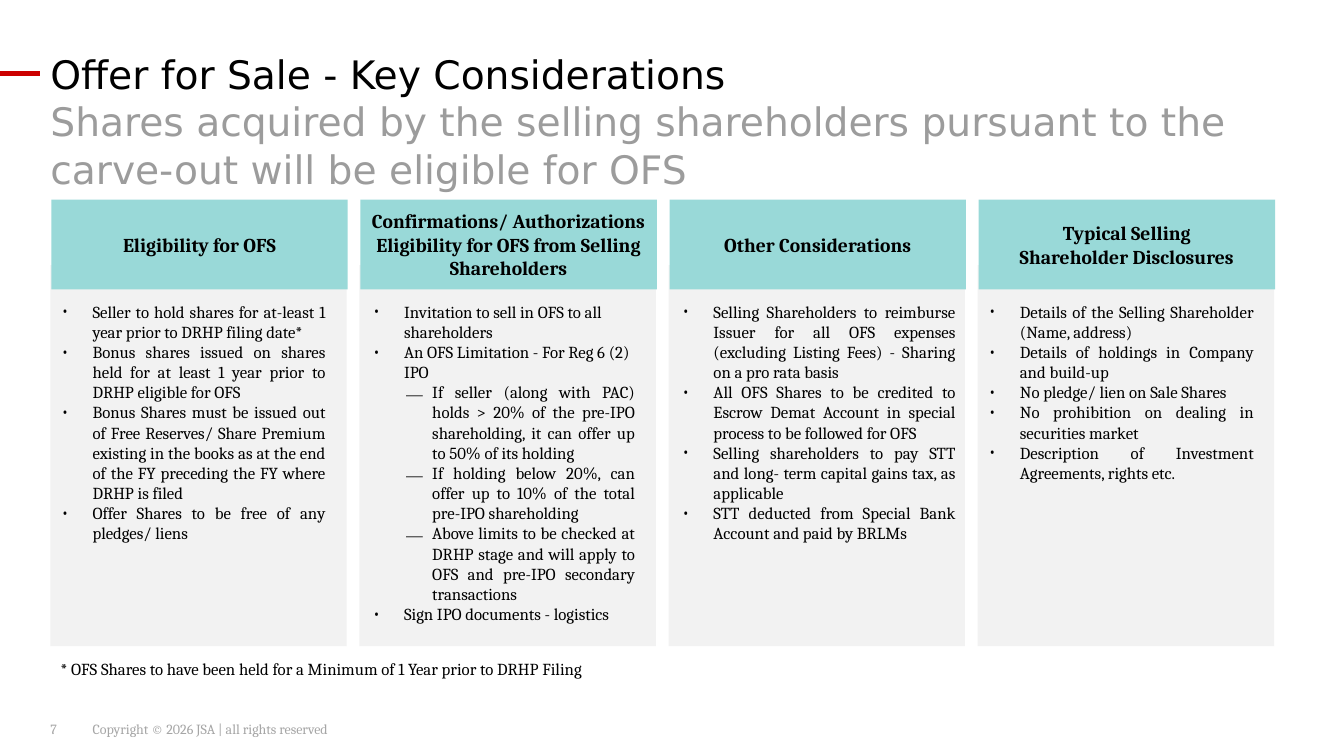
from dataclasses import dataclass

from lxml.etree import SubElement
from pptx import Presentation
from pptx.dml.color import RGBColor
from pptx.enum.shapes import MSO_CONNECTOR, MSO_SHAPE
from pptx.enum.text import MSO_ANCHOR, MSO_AUTO_SIZE, PP_ALIGN
from pptx.oxml.ns import qn
from pptx.util import Inches, Pt

GRID_COLUMNS, GRID_ROWS = 400, 225
MARGIN, CONTENT_WIDTH = 15, 370
CARD_PITCH, CARD_WIDTH = 92, 88.2
HEADER_TOP, HEADER_HEIGHT = 59.4, 26.7
PANEL_TOP, PANEL_HEIGHT = 78.9, 113.4
LIST_TOP, LIST_HEIGHT = 88.2, 100
BULLET, DASH = "•", "⎼"
INDENTS = {BULLET: (9.3, 9.3), DASH: (17.7, 7.8)}


@dataclass(frozen=True)
class Theme:
    """Colours, fonts and type sizes of the slide."""

    ink: str = "000000"
    subtitle: str = "9C9C9C"
    footer: str = "A6A6A6"
    accent: str = "CC0000"
    header: str = "99D9D8"
    panel: str = "F2F2F2"
    heading_font: str = "DejaVu Sans"
    body_font: str = "Cambria"
    heading_size: int = 28
    header_size: int = 14
    body_size: int = 12
    footer_size: int = 10


@dataclass(frozen=True)
class Card:
    """One column: header lines, marked items and the place of its list."""

    header: tuple
    items: tuple
    list_shift: float
    list_width: float
    align: PP_ALIGN = PP_ALIGN.JUSTIFY


CARDS = (
    Card(("Eligibility for OFS",), (
        (BULLET, "Seller to hold shares for at-least 1 year prior to DRHP filing date*"),
        (BULLET, "Bonus shares issued on shares held for at least 1 year prior to DRHP eligible for OFS"),
        (BULLET, "Bonus Shares must be issued out of Free Reserves/ Share Premium existing in the "
                 "books as at the end of the FY preceding the FY where DRHP is filed"),
        (BULLET, "Offer Shares to be free of any pledges/ liens"),
    ), 0.3, 84.6),
    Card(("Confirmations/ Authorizations Eligibility for OFS from Selling Shareholders",), (
        (BULLET, "Invitation to sell in OFS to all shareholders"),
        (BULLET, "An OFS Limitation - For Reg 6 (2) IPO"),
        (DASH, "If seller (along with PAC) holds > 20% of the pre-IPO shareholding, "
               "it can offer up to 50% of its holding"),
        (DASH, "If holding below 20%, can offer up to 10% of the total pre-IPO shareholding"),
        (DASH, "Above limits to be checked at DRHP stage and will apply to OFS and "
               "pre-IPO secondary transactions"),
        (BULLET, "Sign IPO documents - logistics"),
    ), 1, 84, PP_ALIGN.LEFT),
    Card(("Other Considerations",), (
        (BULLET, "Selling Shareholders to reimburse Issuer for all OFS expenses "
                 "(excluding Listing Fees) - Sharing on a pro rata basis"),
        (BULLET, "All OFS Shares to be credited to Escrow Demat Account in special process "
                 "to be followed for OFS"),
        (BULLET, "Selling shareholders to pay STT and long- term capital gains tax, as applicable"),
        (BULLET, "STT deducted from Special Bank Account and paid by BRLMs"),
    ), 1.1, 87.3),
    Card(("Typical Selling", "Shareholder Disclosures"), (
        (BULLET, "Details of the Selling Shareholder (Name, address)"),
        (BULLET, "Details of holdings in Company and build-up"),
        (BULLET, "No pledge/ lien on Sale Shares"),
        (BULLET, "No prohibition on dealing in securities market"),
        (BULLET, "Description of Investment Agreements, rights etc."),
    ), 0.3, 84.9),
)


def write_text(paragraph, text, *, size, font, color, bold=False, align=PP_ALIGN.LEFT,
               marker=None, indent=(0, 0)):
    """Write text into a paragraph with the given format."""
    paragraph.alignment = align
    paragraph.space_before = Pt(0)
    properties = paragraph._p.get_or_add_pPr()
    properties.set("marL", str(indent[0]))
    properties.set("indent", str(-indent[1]))
    if marker:
        SubElement(properties, qn("a:buFont")).set("typeface", font)
        SubElement(properties, qn("a:buChar")).set("char", marker)
    else:
        SubElement(properties, qn("a:buNone"))
    run = paragraph.add_run()
    run.text = text
    run.font.size = Pt(size)
    run.font.name = font
    run.font.bold = bold
    run.font.color.rgb = RGBColor.from_string(color)


class SlideBuilder:
    """Draws themed elements on a slide in grid units."""

    def __init__(self, presentation, theme):
        """Add a title and content slide."""
        self.theme = theme
        self.column = presentation.slide_width / GRID_COLUMNS
        self.row = presentation.slide_height / GRID_ROWS
        self.slide = presentation.slides.add_slide(presentation.slide_layouts[1])

    def box(self, left, top, width, height):
        """Turn grid units into lengths."""
        return (round(left * self.column), round(top * self.row),
                round(width * self.column), round(height * self.row))

    def prepare_frame(self, shape, anchor, inset=True):
        """Set wrapping, anchor and insets of a text frame."""
        frame = shape.text_frame
        frame.word_wrap = True
        frame.auto_size = MSO_AUTO_SIZE.NONE
        frame.vertical_anchor = anchor
        if not inset:
            frame.margin_left = frame.margin_right = frame.margin_top = frame.margin_bottom = 0
        return frame

    def heading(self, index, text, top, height, color):
        """Place and fill a heading placeholder."""
        shape = self.slide.placeholders[index]
        shape.left, shape.top, shape.width, shape.height = self.box(MARGIN, top, CONTENT_WIDTH, height)
        frame = self.prepare_frame(shape, MSO_ANCHOR.TOP, inset=False)
        write_text(frame.paragraphs[0], text, size=self.theme.heading_size,
                   font=self.theme.heading_font, color=color)

    def rectangle(self, left, top, width, height, fill):
        """Draw a borderless filled rectangle."""
        shape = self.slide.shapes.add_shape(MSO_SHAPE.RECTANGLE, *self.box(left, top, width, height))
        shape.shadow.inherit = False
        shape.fill.solid()
        shape.fill.fore_color.rgb = RGBColor.from_string(fill)
        shape.line.fill.background()
        return shape

    def text(self, text, left, top, width, height, *, size, color, inset=True):
        """Add a single paragraph text box."""
        shape = self.slide.shapes.add_textbox(*self.box(left, top, width, height))
        frame = self.prepare_frame(shape, MSO_ANCHOR.TOP if inset else MSO_ANCHOR.MIDDLE, inset)
        write_text(frame.paragraphs[0], text, size=size, font=self.theme.body_font, color=color)

    def accent_line(self, top, length):
        """Draw the accent line from the left edge."""
        left, y, width, _ = self.box(0, top, length, 0)
        line = self.slide.shapes.add_connector(MSO_CONNECTOR.STRAIGHT, left, y, left + width, y)
        line.line.color.rgb = RGBColor.from_string(self.theme.accent)
        line.line.width = Pt(3)
        SubElement(line._element.spPr, qn("a:effectLst"))

    def card(self, position, card):
        """Draw a panel, its header and its list."""
        left = MARGIN + position * CARD_PITCH
        self.rectangle(left, PANEL_TOP, CARD_WIDTH, PANEL_HEIGHT, self.theme.panel)
        header = self.rectangle(left + 0.3, HEADER_TOP, CARD_WIDTH, HEADER_HEIGHT, self.theme.header)
        frame = self.prepare_frame(header, MSO_ANCHOR.MIDDLE)
        for number, line in enumerate(card.header):
            paragraph = frame.add_paragraph() if number else frame.paragraphs[0]
            write_text(paragraph, line, size=self.theme.header_size, font=self.theme.body_font,
                       color=self.theme.ink, bold=True, align=PP_ALIGN.CENTER)
        shape = self.slide.shapes.add_textbox(
            *self.box(left + card.list_shift, LIST_TOP, card.list_width, LIST_HEIGHT))
        frame = self.prepare_frame(shape, MSO_ANCHOR.TOP)
        for number, (marker, item) in enumerate(card.items):
            paragraph = frame.add_paragraph() if number else frame.paragraphs[0]
            write_text(paragraph, item, size=self.theme.body_size, font=self.theme.body_font,
                       color=self.theme.ink, marker=marker,
                       align=PP_ALIGN.JUSTIFY if marker == DASH else card.align,
                       indent=[round(step * self.column) for step in INDENTS[marker]])


def main():
    """Build and save the presentation."""
    presentation = Presentation()
    presentation.slide_width, presentation.slide_height = Inches(13.33), Inches(7.5)
    theme = Theme()
    builder = SlideBuilder(presentation, theme)
    builder.heading(0, "Offer for Sale - Key Considerations", 15, 14.1, theme.ink)
    builder.heading(1, "Shares acquired by the selling shareholders pursuant to the carve-out "
                    "will be eligible for OFS", 29.1, 26.4, theme.subtitle)
    builder.accent_line(21.9, 12)
    for position, card in enumerate(CARDS):
        builder.card(position, card)
    builder.text("* OFS Shares to have been held for a Minimum of 1 Year prior to DRHP Filing",
                 MARGIN, 194.7, 190.8, 9, size=theme.body_size, color=theme.ink)
    for text, left, width in (("7", MARGIN, 12), ("Copyright © 2026 JSA | all rights reserved", 27.6, 175)):
        builder.text(text, left, 214.5, width, 5.1, size=theme.footer_size, color=theme.footer, inset=False)
    presentation.save("out.pptx")


if __name__ == "__main__":
    main()
